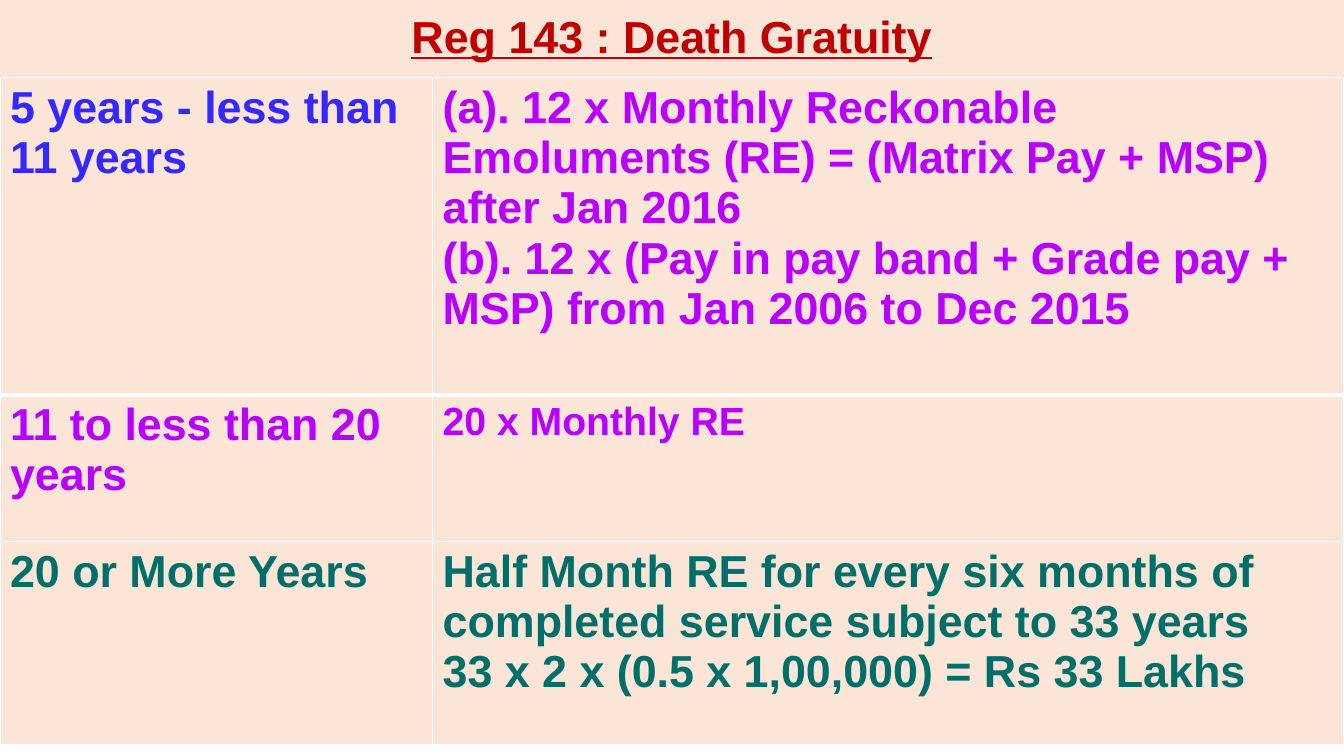
from lxml import etree
from pptx import Presentation
from pptx import util as u
from pptx.dml.color import RGBColor
from pptx.enum import text
from pptx.oxml.ns import qn

PX = 9525  # EMU per px, 96 px to the inch
WIDTH, HEIGHT = 1280, 720
TITLE_HEIGHT = 74
COLUMNS = [412, 868]
ROWS = [302, 140, 193]
COLORS = {
    "peach": "FBE5D6",
    "white": "FFFFFF",
    "red": "C00000",
    "blue": "3427FF",
    "purple": "B800FF",
    "teal": "006E69",
}

# Each cell: paragraphs, colour, text size
GRATUITY = [
    [
        (["5 years - less than 11 years"], "blue", 32),
        (["(a). 12 x Monthly Reckonable Emoluments (RE) = (Matrix Pay + MSP) after Jan 2016",
          "(b). 12 x (Pay in pay band + Grade pay + MSP) from Jan 2006 to Dec 2015"], "purple", 32),
    ],
    [
        (["11 to less than 20 years"], "purple", 32),
        (["20 x Monthly RE"], "purple", 28),
    ],
    [
        (["20 or More Years"], "teal", 32),
        (["Half Month RE for every six months of completed service subject to 33 years",
          "33 x 2 x (0.5 x 1,00,000) = Rs 33 Lakhs"], "teal", 32),
    ],
]


def px(length):
    return u.Emu(length * PX)


def rgb(name):
    return RGBColor.from_string(COLORS[name])


def paint(target, color):
    target.fill.solid()
    target.fill.fore_color.rgb = rgb(color)


def write(frame, lines, *, color, size=32, underline=None, align=None, spacing=None):
    for index, line in enumerate(lines):
        para = frame.add_paragraph() if index else frame.paragraphs[0]
        para.alignment = align
        para.line_spacing = spacing
        span = para.add_run()
        span.text = line
        font = span.font
        font.name, font.size, font.bold = "Arial", u.Pt(size), True
        font.underline = underline
        font.color.rgb = rgb(color)


def set_borders(cell, **widths):
    """Draw white cell borders; widths in points are keyed L, R, T, B in that order."""
    properties = cell._tc.get_or_add_tcPr()
    for index, (side, width) in enumerate(widths.items()):
        line = etree.Element(qn(f"a:ln{side}"), w=str(u.Pt(width)))
        fill = etree.SubElement(line, qn("a:solidFill"))
        etree.SubElement(fill, qn("a:srgbClr"), val=COLORS["white"])
        properties.insert(index, line)


def add_title(page, words):
    title = page.shapes.title
    title.left, title.top = px(0), px(0)
    title.width, title.height = px(WIDTH), px(TITLE_HEIGHT)
    paint(title, "peach")
    title.text_frame.vertical_anchor = text.MSO_ANCHOR.MIDDLE
    write(title.text_frame, [words], color="red", underline=True,
          align=text.PP_ALIGN.CENTER, spacing=0.9)


def add_gratuity_table(page):
    frame = page.shapes.add_table(len(ROWS), len(COLUMNS), px(0), px(TITLE_HEIGHT),
                                  px(sum(COLUMNS)), px(sum(ROWS)))
    table = frame.table
    table.horz_banding = False
    for column, width in zip(table.columns, COLUMNS):
        column.width = px(width)
    for index, (row, height) in enumerate(zip(table.rows, ROWS)):
        row.height = px(height)
        for cell, (lines, color, size) in zip(row.cells, GRATUITY[index]):
            paint(cell, "peach")
            set_borders(cell, L=1, R=1, T=3 if index == 1 else 1, B=3 if index == 0 else 1)
            write(cell.text_frame, lines, color=color, size=size)


def main():
    deck = Presentation()
    deck.slide_width, deck.slide_height = px(WIDTH), px(HEIGHT)
    page = deck.slides.add_slide(deck.slide_layouts.get_by_name("Title Only"))
    add_title(page, "Reg 143 : Death Gratuity")
    add_gratuity_table(page)
    deck.save("out.pptx")


if __name__ == "__main__":
    main()
